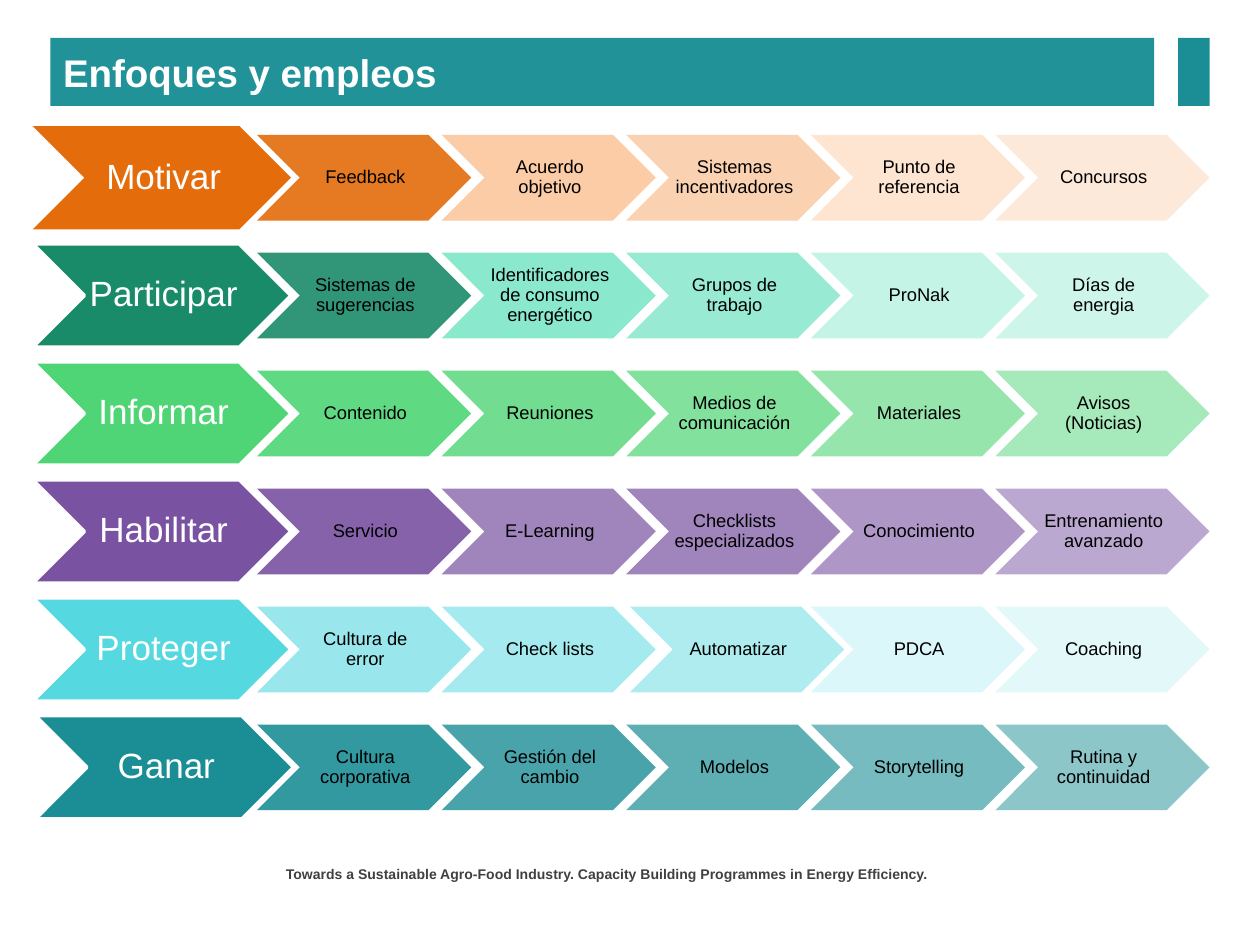
from pptx import Presentation
from pptx.dml.color import RGBColor
from pptx.enum.shapes import MSO_SHAPE as Shape
from pptx.enum.text import MSO_ANCHOR as Anchor, MSO_AUTO_SIZE as AutoSize, PP_ALIGN as Align
from pptx.oxml.ns import qn
from pptx.util import Inches, Pt
from lxml import etree

FONT = "Arial"
COLORS = {
    "white": "FFFFFF", "black": "000000", "footer": "404040",
    "title": "209298", "teal": "1B8E95",
    "orange": "E46C0A", "peach": "FAC090", "cream": "FCD5B5",
    "forest": "1A8B69", "mint": "6DE3C0", "pale mint": "9DEDD5",
    "green": "4FD576", "purple": "7952A2",
    "cyan": "55D8E0", "sky": "8EE5EB", "pale sky": "C6F2F5",
}
OPACITIES = [90, 80, 70, 60, 50]

# Each row: heading, heading colour, step colours, step labels
ROWS = [
    ("Motivar", "orange", ["orange", "peach", "peach", "cream", "cream"],
     ["Feedback", "Acuerdo objetivo", "Sistemas incentivadores",
      "Punto de referencia", "Concursos"]),
    ("Participar", "forest", ["forest", "mint", "mint", "pale mint", "pale mint"],
     ["Sistemas de sugerencias", "Identificadores de consumo energético",
      "Grupos de trabajo", "ProNak", "Días de energia"]),
    ("Informar", "green", ["green"] * 5,
     ["Contenido", "Reuniones", "Medios de comunicación", "Materiales",
      "Avisos (Noticias)"]),
    ("Habilitar", "purple", ["purple"] * 5,
     ["Servicio", "E-Learning", "Checklists especializados", "Conocimiento",
      "Entrenamiento avanzado"]),
    ("Proteger", "cyan", ["sky"] * 3 + ["pale sky"] * 2,
     ["Cultura de error", "Check lists", "Automatizar", "PDCA", "Coaching"]),
    ("Ganar", "teal", ["teal"] * 5,
     ["Cultura corporativa", "Gestión del cambio", "Modelos", "Storytelling",
      "Rutina y continuidad"]),
]
# Small departures from the regular grid
HEADING_SHIFTS = {"Ganar": 0.02}
STEP_SHIFTS = {"Automatizar": 0.03}
STEP_OPACITIES = {"E-Learning": 70}


def color(name):
    return RGBColor.from_string(COLORS[name])


def fill_shape(shape, color_name, opacity=100):
    shape.fill.solid()
    shape.fill.fore_color.rgb = color(color_name)
    if opacity < 100:
        rgb = shape.fill._xPr.find(qn("a:solidFill")).find(qn("a:srgbClr"))
        etree.SubElement(rgb, qn("a:alpha"), val=str(opacity * 1000))


def write_text(text_frame, text, size, color_name, bold=False, align=Align.LEFT):
    text_frame.text = text
    text_frame.word_wrap = True
    paragraph = text_frame.paragraphs[0]
    paragraph.alignment = align
    font = paragraph.runs[0].font
    font.name, font.size, font.bold = FONT, Pt(size), bold
    font.color.rgb = color(color_name)


def add_plain_shape(slide, kind, left, top, width, height, fill, opacity=100):
    shape = slide.shapes.add_shape(
        kind, Inches(left), Inches(top), Inches(width), Inches(height))
    shape.shadow.inherit = False
    fill_shape(shape, fill, opacity)
    shape.line.fill.background()
    return shape


def add_chevron(slide, box, text, size, text_color, fill, opacity=100, inset=0.02):
    chevron = add_plain_shape(slide, Shape.CHEVRON, *box, fill, opacity)
    frame = chevron.text_frame
    frame.margin_left, frame.margin_right = Inches(inset), 0
    frame.margin_top = frame.margin_bottom = Inches(0.01)
    frame.vertical_anchor = Anchor.MIDDLE
    write_text(frame, text, size, text_color, align=Align.CENTER)
    frame.paragraphs[0].line_spacing = 0.9
    return chevron


def add_header(slide, left, top, width, height):
    """Title bar with a narrow accent block at its right end."""
    accent_width, gap = 0.25, 0.19
    bar_width = width - accent_width - gap
    title = slide.shapes.title
    title.left, title.top = Inches(left), Inches(top)
    title.width, title.height = Inches(bar_width), Inches(height)
    fill_shape(title, "title")
    write_text(title.text_frame, "Enfoques y empleos", 22, "white", bold=True)
    title.text_frame.vertical_anchor = Anchor.MIDDLE
    title.text_frame.auto_size = AutoSize.NONE
    add_plain_shape(slide, Shape.RECTANGLE, left + bar_width + gap, top,
                    accent_width, height, "teal")


def add_row(slide, left, top, width, height, row, outlined):
    """One large heading chevron followed by five fading steps."""
    heading, heading_color, step_colors, labels = row
    box = (left + HEADING_SHIFTS.get(heading, 0), top, 2.05, height)
    chevron = add_chevron(slide, box, heading, 20, "white", heading_color, inset=0.03)
    if outlined:
        chevron.line.color.rgb = color("white")
        chevron.line.width = Pt(2)

    step_width, step_height, first = 1.7, 0.68, 1.78
    pitch = (width - first - step_width) / (len(labels) - 1)
    step_top = top + (height - step_height) / 2
    for index, (label, fill, opacity) in enumerate(zip(labels, step_colors, OPACITIES)):
        step_left = left + first + index * pitch + STEP_SHIFTS.get(label, 0)
        add_chevron(slide, (step_left, step_top, step_width, step_height), label,
                    10.5, "black", fill, STEP_OPACITIES.get(label, opacity))


def add_rows(slide, left, top, width, height):
    row_height = 0.82
    pitch = (height - row_height) / (len(ROWS) - 1)
    for index, row in enumerate(ROWS):
        add_row(slide, left, top + index * pitch, width, row_height, row,
                outlined=index > 0)


def add_footer(slide, left, top, width, height):
    footer = slide.shapes.add_textbox(
        Inches(left), Inches(top), Inches(width), Inches(height))
    write_text(footer.text_frame,
               "Towards a Sustainable Agro-Food Industry. "
               "Capacity Building Programmes in Energy Efficiency.",
               8, "footer", bold=True)


def main():
    presentation = Presentation()
    presentation.slide_width, presentation.slide_height = Inches(10), Inches(7.5)
    slide = presentation.slides.add_slide(presentation.slide_layouts[5])
    add_footer(slide, 2.17, 6.82, 5.5, 0.21)
    add_rows(slide, 0.26, 1, 9.34, 5.5)
    add_header(slide, 0.4, 0.3, 9.2, 0.54)
    presentation.save("out.pptx")


if __name__ == "__main__":
    main()
